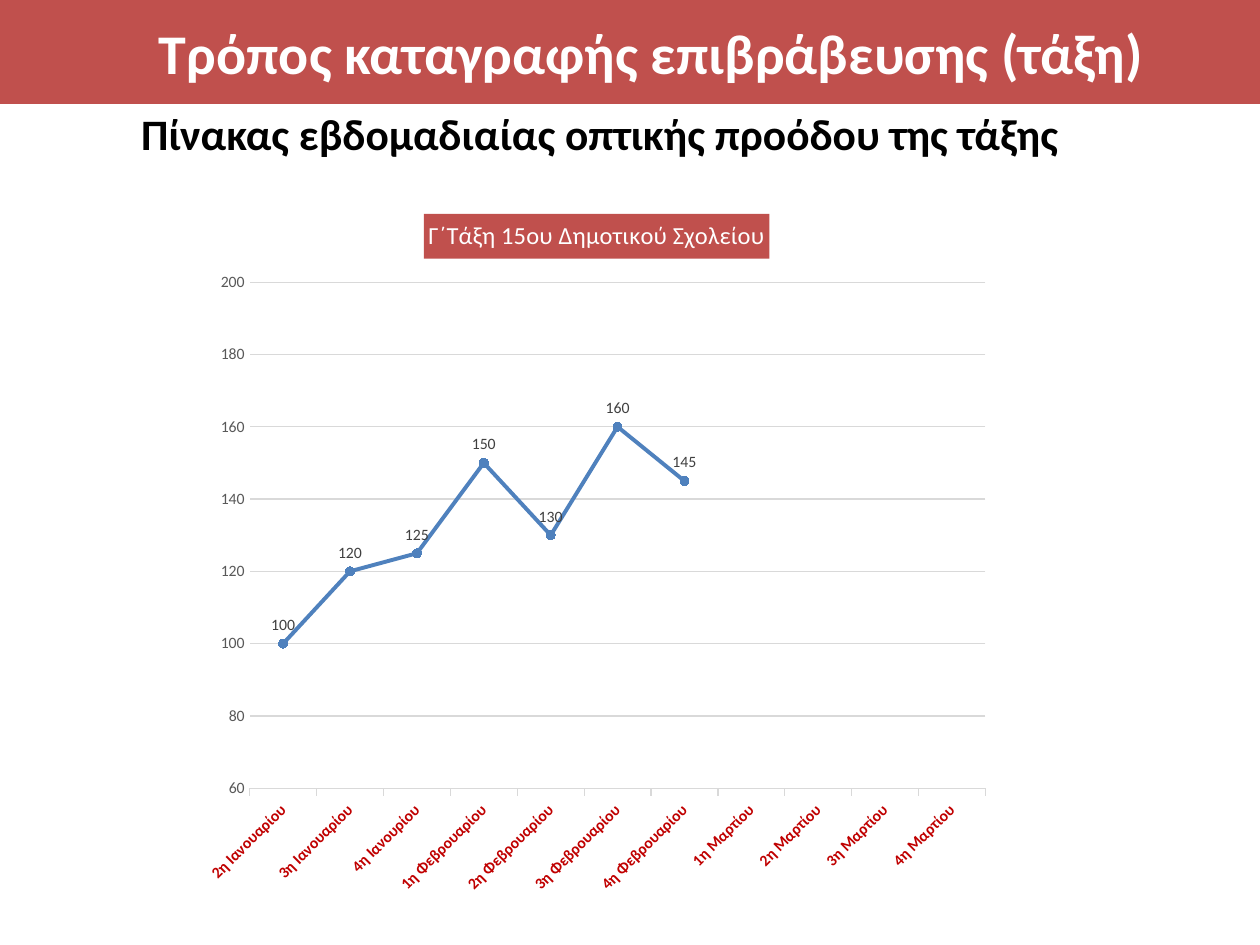
import pptx
import pptx.chart.data
import pptx.dml.color
import pptx.enum.chart
import pptx.enum.text
import pptx.util

THEME = {
    "font": "Calibri",
    "banner": "C0504D", "white": "FFFFFF", "black": "000000",
    "line": "4F81BD", "grid": "D9D9D9", "scale": "595959",
    "values": "404040", "weeks": "C00000",
    "title_size": 32, "subtitle_size": 24.8, "chart_title_size": 14,
    "chart_size": 10, "label_size": 9,
}
WEEKLY_POINTS = {
    "2η Ιανουαρίου": 100, "3η Ιανουαρίου": 120, "4η Ιανουρίου": 125,
    "1η Φεβρουαρίου": 150, "2η Φεβρουαρίου": 130,
    "3η Φεβρουαρίου": 160, "4η Φεβρουαρίου": 145,
    "1η Μαρτίου": None, "2η Μαρτίου": None,
    "3η Μαρτίου": None, "4η Μαρτίου": None,
}


def rgb(role):
    return pptx.dml.color.RGBColor.from_string(THEME[role])


def style(font, size, color, bold=False):
    font.name = THEME["font"]
    font.size = pptx.util.Pt(THEME[size])
    font.color.rgb = rgb(color)
    font.bold = bold


deck = pptx.Presentation()
deck.slide_width = pptx.util.Inches(10)
deck.slide_height = pptx.util.Inches(7.5)
W, H = deck.slide_width, deck.slide_height
slide = deck.slides.add_slide(deck.slide_layouts[5])

subtitle = slide.shapes.add_textbox(
    int(W * 0.103), int(H * 0.124), int(W * 0.747), int(H * 0.08))
frame = subtitle.text_frame
frame.word_wrap = True
frame.margin_left = frame.margin_right = frame.margin_top = frame.margin_bottom = 0
frame.text = "Πίνακας εβδομαδιαίας οπτικής προόδου της τάξης"
heading = frame.paragraphs[0]
heading.alignment = pptx.enum.text.PP_ALIGN.CENTER
heading.line_spacing = 0.8
style(heading.font, "subtitle_size", "black", True)

banner = slide.shapes.title
banner.left, banner.top, banner.width, banner.height = 0, 0, W, int(H * 0.11)
banner.fill.solid()
banner.fill.fore_color.rgb = rgb("banner")
frame = banner.text_frame
frame.auto_size = pptx.enum.text.MSO_AUTO_SIZE.NONE
frame.word_wrap = True
frame.vertical_anchor = pptx.enum.text.MSO_ANCHOR.MIDDLE
frame.margin_left, frame.margin_right = pptx.util.Inches(0.5), pptx.util.Inches(0.16)
frame.margin_top = frame.margin_bottom = pptx.util.Inches(0.06)
frame.text = "Τρόπος καταγραφής επιβράβευσης (τάξη)"
heading = frame.paragraphs[0]
heading.alignment = pptx.enum.text.PP_ALIGN.CENTER
style(heading.font, "title_size", "white", True)

points = pptx.chart.data.CategoryChartData()
points.categories = list(WEEKLY_POINTS)
points.add_series("Series 1", list(WEEKLY_POINTS.values()))
progress = slide.shapes.add_chart(
    pptx.enum.chart.XL_CHART_TYPE.LINE_MARKERS,
    int(W * 0.152), int(H * 0.204), int(W * 0.643), int(H * 0.757), points).chart
style(progress.font, "chart_size", "black")
progress.has_legend = False
progress.has_title = True
class_name = progress.chart_title
class_name.include_in_layout = False
class_name.format.fill.solid()
class_name.format.fill.fore_color.rgb = rgb("banner")
class_name.text_frame.text = "Γ΄Τάξη 15ου Δημοτικού Σχολείου"
style(class_name.text_frame.paragraphs[0].font, "chart_title_size", "white")

weeks = progress.category_axis
weeks.major_tick_mark = pptx.enum.chart.XL_TICK_MARK.OUTSIDE
weeks.format.line.color.rgb = rgb("grid")
weeks.format.line.width = pptx.util.Pt(0.75)
style(weeks.tick_labels.font, "label_size", "weeks", True)
weeks._element.txPr.bodyPr.set("rot", str(-45 * 60000))

scale = progress.value_axis
scale.minimum_scale, scale.maximum_scale, scale.major_unit = 60, 200, 20
scale.major_tick_mark = pptx.enum.chart.XL_TICK_MARK.NONE
scale.format.line.fill.background()
scale.major_gridlines.format.line.color.rgb = rgb("grid")
scale.major_gridlines.format.line.width = pptx.util.Pt(0.75)
style(scale.tick_labels.font, "label_size", "scale")

plot = progress.plots[0]
plot.vary_by_categories = False
score = plot.series[0]
score.smooth = False
score.format.line.color.rgb = rgb("line")
score.format.line.width = pptx.util.Pt(2.25)
score.marker.style = pptx.enum.chart.XL_MARKER_STYLE.CIRCLE
score.marker.size = 5
score.marker.format.fill.solid()
score.marker.format.fill.fore_color.rgb = rgb("line")
score.marker.format.line.color.rgb = rgb("line")
score.data_labels.show_value = True
score.data_labels.position = pptx.enum.chart.XL_LABEL_POSITION.ABOVE
style(score.data_labels.font, "label_size", "values")

deck.save("out.pptx")
